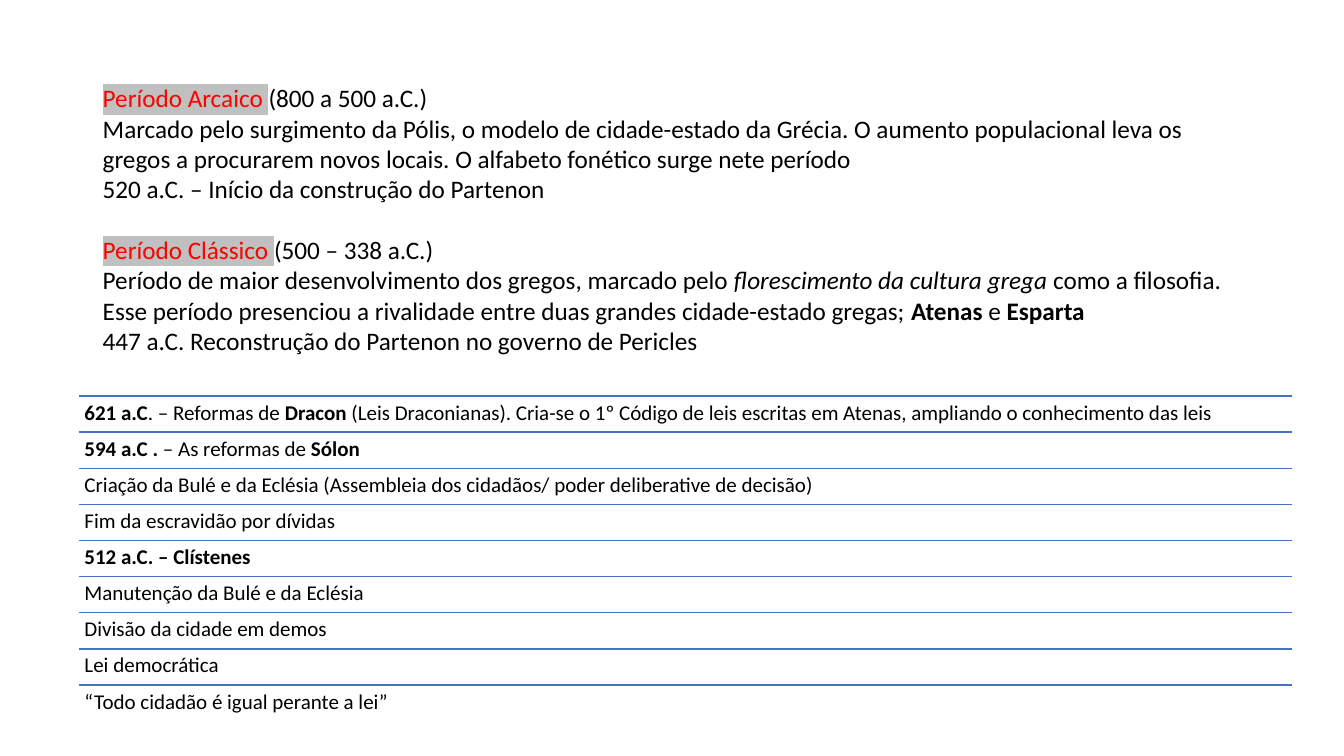
from dataclasses import dataclass

import pptx
import pptx.dml.color
import pptx.enum.shapes
import pptx.enum.text
import pptx.oxml
import pptx.oxml.ns
import pptx.util
from pptx.util import Cm

LEFT, TOP, WIDTH, PITCH = 1.98, 9.98, 30.58, 0.91
INSET = 0.15


@dataclass
class Run:
    text: str
    bold: bool = False
    slant: bool = False
    ink: str = "000000"
    mark: str = ""


@dataclass
class Line:
    runs: list[Run]
    gap: float = 0


def paint(code: str) -> pptx.dml.color.RGBColor:
    return pptx.dml.color.RGBColor.from_string(code)


def title(text: str) -> Run:
    return Run(text, ink="FF0000", mark="C0C0C0")


def write(para, runs: list[Run], size: float) -> None:
    for item in runs:
        run = para.add_run()
        run.text = item.text
        font = run.font
        font.name = "Calibri"
        font.size = pptx.util.Pt(size)
        font.bold = item.bold
        font.italic = item.slant
        font.color.rgb = paint(item.ink)
        if item.mark:
            ns = pptx.oxml.ns.nsdecls("a")
            glow = pptx.oxml.parse_xml(
                f'<a:highlight {ns}><a:srgbClr val="{item.mark}"/></a:highlight>'
            )
            fill = run._r.rPr.find(pptx.oxml.ns.qn("a:solidFill"))
            fill.addnext(glow)


def add_rule(slide, top: float) -> None:
    rule = slide.shapes.add_connector(
        pptx.enum.shapes.MSO_CONNECTOR.STRAIGHT,
        Cm(LEFT), Cm(top), Cm(LEFT + WIDTH), Cm(top),
    )
    rule.line.color.rgb = paint("4472C4")
    rule.line.width = pptx.util.Pt(1)
    pptx.oxml.ns.qn("a:effectLst")
    rule._element.spPr.append(
        pptx.oxml.parse_xml(f'<a:effectLst {pptx.oxml.ns.nsdecls("a")}/>')
    )


def add_row(slide, runs: list[Run], top: float) -> None:
    add_rule(slide, top)
    box = slide.shapes.add_textbox(Cm(LEFT), Cm(top), Cm(WIDTH), Cm(PITCH))
    frame = box.text_frame
    frame.word_wrap = True
    frame.margin_left = frame.margin_right = Cm(INSET)
    frame.margin_top = frame.margin_bottom = Cm(INSET)
    para = frame.paragraphs[0]
    para.line_spacing = 0.9
    write(para, runs, 15)


def add_body(slide, lines: list[Line]) -> None:
    box = slide.shapes.add_textbox(Cm(2.34), Cm(1.96), Cm(29.21), Cm(8.2))
    frame = box.text_frame
    frame.word_wrap = True
    frame.auto_size = pptx.enum.text.MSO_AUTO_SIZE.SHAPE_TO_FIT_TEXT
    for spot, line in enumerate(lines):
        para = frame.add_paragraph() if spot else frame.paragraphs[0]
        para.space_before = pptx.util.Pt(line.gap)
        write(para, line.runs, 18)


ROWS = [
    [
        Run("621 a.C", bold=True),
        Run(". – Reformas de "),
        Run("Dracon", bold=True),
        Run(" (Leis Draconianas). Cria-se o 1º Código de leis escritas em Atenas, "
            "ampliando o conhecimento das leis"),
    ],
    [Run("594 a.C .", bold=True), Run(" – As reformas de "), Run("Sólon", bold=True)],
    [Run("Criação da Bulé e da Eclésia (Assembleia dos cidadãos/ "
         "poder deliberative de decisão)")],
    [Run("Fim da escravidão por dívidas")],
    [Run("512 a.C. – Clístenes", bold=True)],
    [Run("Manutenção da Bulé e da Eclésia")],
    [Run("Divisão da cidade em demos")],
    [Run("Lei democrática")],
    [Run("“Todo cidadão é igual perante a lei”")],
]

BODY = [
    Line([title("Período Arcaico "), Run("(800 a 500 a.C.)")]),
    Line([Run("Marcado pelo surgimento da Pólis, o modelo de cidade-estado da Grécia. "
              "O aumento populacional leva os gregos a procurarem novos locais. "
              "O alfabeto fonético surge nete período")]),
    Line([Run("520 a.C. – Início da construção do Partenon")]),
    Line([title("Período Clássico "), Run("(500 – 338 a.C.)")], gap=22),
    Line([
        Run("Período de maior desenvolvimento dos gregos, marcado pelo "),
        Run("florescimento da cultura grega ", slant=True),
        Run("como a filosofia. Esse período presenciou a rivalidade entre duas "
            "grandes cidade-estado gregas; "),
        Run("Atenas", bold=True),
        Run(" e "),
        Run("Esparta", bold=True),
    ]),
    Line([Run("447 a.C. Reconstrução do Partenon no governo de Pericles")]),
]


def main() -> None:
    deck = pptx.Presentation()
    deck.slide_width = Cm(33.87)
    deck.slide_height = Cm(19.05)
    slide = deck.slides.add_slide(deck.slide_layouts[6])
    for spot, runs in enumerate(ROWS):
        add_row(slide, runs, TOP + spot * PITCH)
    add_body(slide, BODY)
    deck.save("out.pptx")


if __name__ == "__main__":
    main()
